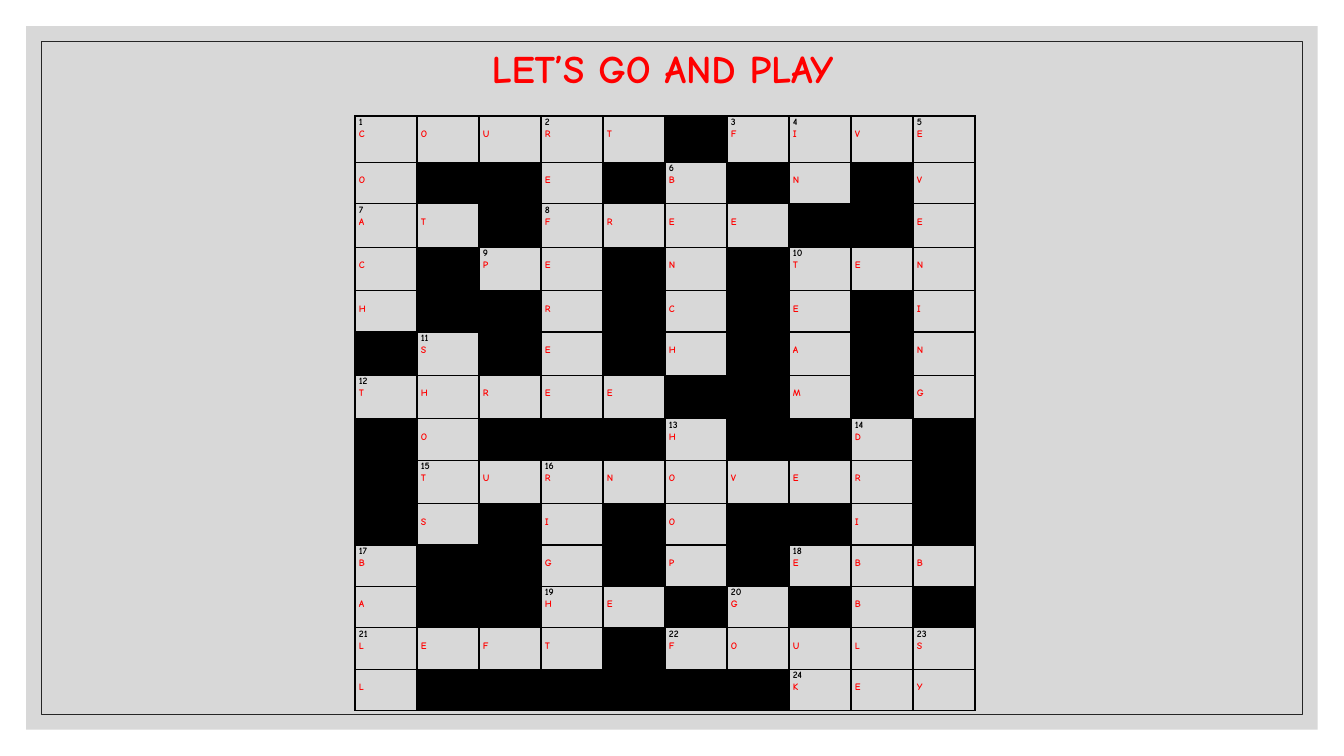
from dataclasses import dataclass

from lxml.etree import SubElement
from pptx import Presentation
from pptx.dml.color import RGBColor
from pptx.enum.shapes import MSO_SHAPE
from pptx.enum.text import MSO_ANCHOR, MSO_AUTO_SIZE, PP_ALIGN
from pptx.oxml import parse_xml
from pptx.oxml.ns import nsdecls, qn
from pptx.util import Inches, Pt


@dataclass(frozen=True)
class Theme:
    font: str = "Comic Neue"
    ink: str = "000000"
    answer: str = "FF0000"
    panel: str = "BFBFBF"
    panel_opacity: int = 60
    frame: str = "262626"
    frame_width: float = 0.5
    rule_width: float = 1
    title_size: float = 27.9
    cell_size: float = 7
    line_spacing: float = 1.07


@dataclass(frozen=True)
class Box:
    left: float
    top: float
    width: float
    height: float

    def inset(self, gap):
        return Box(self.left + gap, self.top + gap,
                   self.width - 2 * gap, self.height - 2 * gap)

    def lengths(self):
        return [Inches(value) for value in (self.left, self.top, self.width, self.height)]


THEME = Theme()
SLIDE = Box(0, 0, 13.33, 7.5)
PANEL_GAP = 0.26
FRAME_GAP = 0.15
TITLE_BOX = Box(1.07, 0.26, 11, 0.92)
TITLE_BOTTOM_MARGIN = 0.17
CROSSWORD_BOX = Box(3.52, 1.15, 6.15, 5.9)
SIDE_MARGIN = 0.04
CLUE_LINE = 0.12
ROW_SHARES = [46, 41, 43, 43, 41, 43, 43, 41, 43, 41, 41, 41, 41, 41]
BLOCK = "#"
CROSSWORD = [
    "CouRt#FIvE",
    "o##e#B#n#v",
    "At#Free##e",
    "c#Pe#n#Ten",
    "h##r#c#e#i",
    "#S#e#h#a#n",
    "Three##m#g",
    "#o###H##D#",
    "#TuRnover#",
    "#s#i#o##i#",
    "B##g#p#Ebb",
    "a##He#G#b#",
    "Left#FoulS",
    "l######Key",
]


def style_text(para, color, size, alignment):
    para.alignment = alignment
    para.line_spacing = THEME.line_spacing
    for span in para.runs:
        span.font.name = THEME.font
        span.font.size = Pt(size)
        span.font.bold = True
        span.font.color.rgb = RGBColor.from_string(color)


def add_rectangle(page, box):
    shape = page.shapes.add_shape(MSO_SHAPE.RECTANGLE, *box.lengths())
    shape.shadow.inherit = False
    return shape


def add_backdrop(page, box):
    panel = add_rectangle(page, box)
    panel.fill.solid()
    panel.fill.fore_color.rgb = RGBColor.from_string(THEME.panel)
    panel.line.fill.background()
    color = panel.element.spPr.find(qn("a:solidFill")).find(qn("a:srgbClr"))
    SubElement(color, qn("a:alpha")).set("val", str(THEME.panel_opacity * 1000))

    frame = add_rectangle(page, box.inset(FRAME_GAP))
    frame.fill.background()
    frame.line.color.rgb = RGBColor.from_string(THEME.frame)
    frame.line.width = Pt(THEME.frame_width)


def add_title(page, box, text):
    title = page.shapes.title
    title.left, title.top, title.width, title.height = box.lengths()
    title.element.getparent().append(title.element)
    frame = title.text_frame
    frame.text = text
    frame.word_wrap = True
    frame.auto_size = MSO_AUTO_SIZE.NONE
    frame.vertical_anchor = MSO_ANCHOR.MIDDLE
    frame.margin_bottom = Inches(TITLE_BOTTOM_MARGIN)
    style_text(frame.paragraphs[0], THEME.answer, THEME.title_size, PP_ALIGN.CENTER)


def add_borders(cell):
    properties = cell._tc.get_or_add_tcPr()
    for position, side in enumerate(("lnL", "lnR", "lnT", "lnB")):
        properties.insert(position, parse_xml(
            f'<a:{side} {nsdecls("a")} w="{Pt(THEME.rule_width)}">'
            f'<a:solidFill><a:srgbClr val="{THEME.ink}"/></a:solidFill></a:{side}>'))


def fill_cell(cell, letter, number):
    cell.margin_left = cell.margin_right = Inches(SIDE_MARGIN)
    cell.margin_top = Inches(0 if number else CLUE_LINE)
    cell.margin_bottom = 0
    cell.vertical_anchor = MSO_ANCHOR.TOP
    cell.fill.background()
    lines = [(letter.upper(), THEME.answer)]
    if number:
        lines.insert(0, (str(number), THEME.ink))
    frame = cell.text_frame
    frame.text = "\n".join(text for text, color in lines)
    for para, (text, color) in zip(frame.paragraphs, lines):
        style_text(para, color, THEME.cell_size, PP_ALIGN.JUSTIFY)


def block_cell(cell):
    cell.margin_top = cell.margin_bottom = 0
    cell.fill.solid()
    cell.fill.fore_color.rgb = RGBColor.from_string(THEME.ink)


def add_crossword(page, box, rows):
    columns = len(rows[0])
    table = page.shapes.add_table(len(rows), columns, *box.lengths()).table
    table.first_row = False
    table.horz_banding = False
    for column in table.columns:
        column.width = Inches(box.width / columns)
    for row, share in zip(table.rows, ROW_SHARES):
        row.height = Inches(box.height * share / sum(ROW_SHARES))

    clue = 0
    for row, letters in enumerate(rows):
        for column, letter in enumerate(letters):
            cell = table.cell(row, column)
            if letter == BLOCK:
                block_cell(cell)
            else:
                clue += letter.isupper()
                fill_cell(cell, letter, clue if letter.isupper() else None)
            add_borders(cell)


def main():
    deck = Presentation()
    deck.slide_width = Inches(SLIDE.width)
    deck.slide_height = Inches(SLIDE.height)
    page = deck.slides.add_slide(deck.slide_layouts.get_by_name("Title Only"))
    add_backdrop(page, SLIDE.inset(PANEL_GAP))
    add_title(page, TITLE_BOX, "LET’S GO AND PLAY")
    add_crossword(page, CROSSWORD_BOX, CROSSWORD)
    deck.save("out.pptx")


if __name__ == "__main__":
    main()
